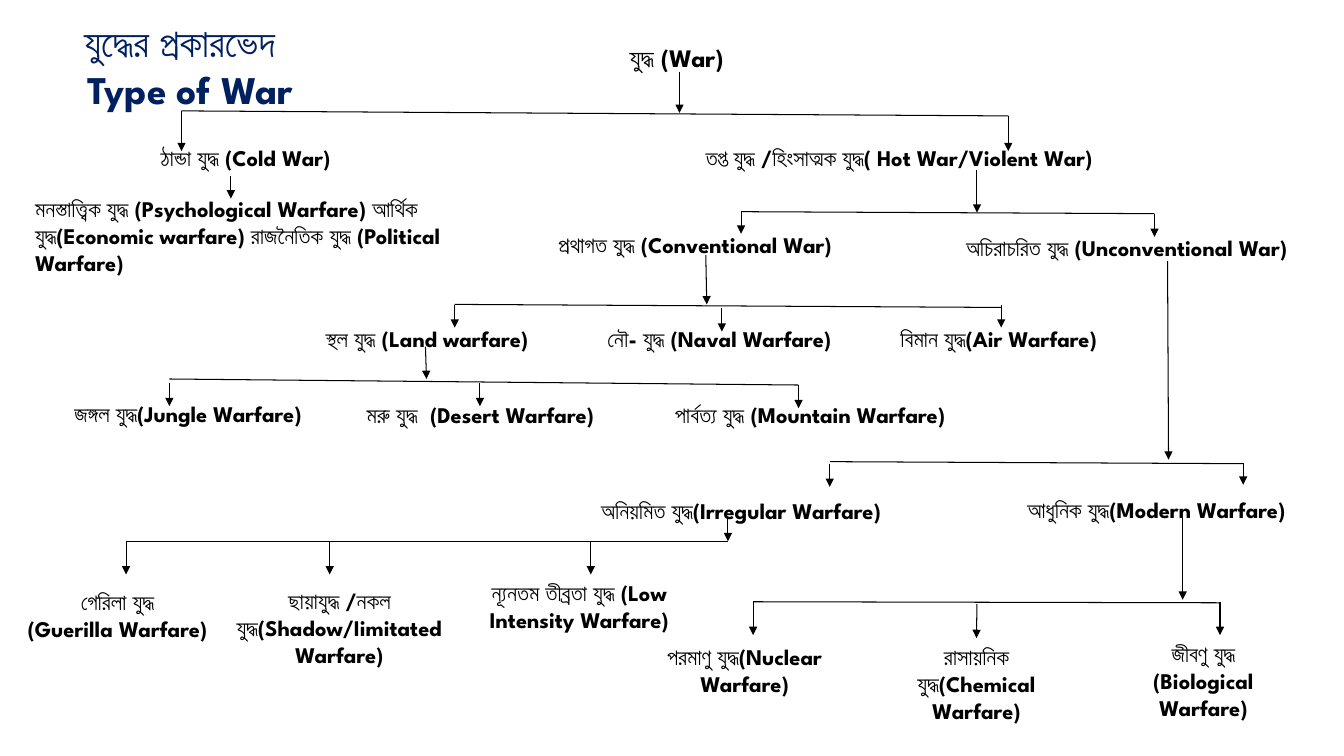
from dataclasses import dataclass

from pptx import Presentation
from pptx.dml.color import RGBColor
from pptx.enum.shapes import MSO_CONNECTOR as Connector
from pptx.enum.text import MSO_ANCHOR as Anchor, MSO_AUTO_SIZE as AutoSize, PP_ALIGN as Align
from pptx.oxml.ns import qn
from pptx.shapes.autoshape import Shape
from pptx.slide import Slide
from pptx.util import Pt
from lxml import etree

PX = 9144  # 100 px to the inch
FONT = "League Spartan"
NAVY, BLACK = "002060", "000000"
TITLE = "যুদ্ধের প্রকারভেদ \v Type of War"
TITLE_BOX = (-38, 13, 443, 104)


@dataclass(frozen=True)
class Label:
    text: str
    left: int
    top: int
    width: int
    height: int = 37
    size: int = 16
    align: Align = Align.CENTER


@dataclass(frozen=True)
class Arrow:
    x: int
    top: int
    bottom: int
    drift: int = 0


@dataclass(frozen=True)
class Rail:
    left: int
    left_y: int
    right: int
    right_y: int


@dataclass(frozen=True)
class Branch:
    """A stem from the parent, a rail below it and drops to the children."""
    stem: Arrow
    rail: Rail
    drops: tuple[Arrow, ...]


LABELS = [
    Label("যুদ্ধ (War) ", 453, 37, 443, 40, size=18),
    Label("ঠান্ডা যুদ্ধ (Cold War) ", 25, 138, 443),
    Label("তপ্ত যুদ্ধ /হিংসাত্মক যুদ্ধ( Hot War/Violent War)", 690, 138, 517, align=Align.LEFT),
    Label("মনস্তাত্ত্বিক যুদ্ধ (Psychological Warfare) আর্থিক যুদ্ধ(Economic warfare) "
          "রাজনৈতিক যুদ্ধ (Political Warfare)", 25, 189, 443, 91, align=Align.LEFT),
    Label("প্রথাগত যুদ্ধ (Conventional War)", 468, 224, 443),
    Label("অচিরাচরিত যুদ্ধ (Unconventional War)", 896, 227, 443),
    Label("স্থল যুদ্ধ (Land warfare)", 260, 318, 327),
    Label("নৌ- যুদ্ধ (Naval Warfare) ", 553, 318, 327),
    Label("বিমান যুদ্ধ(Air Warfare) ", 830, 318, 327),
    Label("জঙ্গল যুদ্ধ(Jungle Warfare)", 32, 392, 309),
    Label("মরু যুদ্ধ  (Desert Warfare)", 327, 393, 299),
    Label("পার্বত্য যুদ্ধ (Mountain Warfare)", 625, 393, 357),
    Label("অনিয়মিত যুদ্ধ(Irregular Warfare)", 529, 488, 412),
    Label("আধুনিক যুদ্ধ(Modern Warfare)", 941, 487, 412),
    Label("গেরিলা যুদ্ধ\v(Guerilla Warfare)", 2, 579, 229, 64),
    Label("ছায়াযুদ্ধ /নকল যুদ্ধ(Shadow/Iimitated Warfare)", 222, 578, 229, 91),
    Label("ন্যূনতম তীব্রতা যুদ্ধ (Low Intensity Warfare)", 460, 570, 229, 91),
    Label("পরমাণু যুদ্ধ(Nuclear Warfare)", 648, 633, 181, 91),
    Label("রাসায়নিক যুদ্ধ(Chemical Warfare)", 878, 633, 181, 91),
    Label("জীবণু যুদ্ধ (Biological Warfare)", 1103, 630, 181, 91),
]

COLD_WAR_ARROW = Arrow(229, 175, 197)
BRANCHES = [
    Branch(Arrow(674, 71, 112), Rail(180, 110, 1000, 115),
           (Arrow(180, 110, 150), Arrow(1000, 115, 150))),
    Branch(Arrow(969, 169, 211), Rail(735, 210, 1145, 212),
           (Arrow(735, 209, 232), Arrow(1145, 212, 235))),
    Branch(Arrow(700, 253, 302, drift=1), Rail(451, 302, 993, 305),
           (Arrow(451, 303, 325), Arrow(716, 306, 329), Arrow(993, 303, 325))),
    Branch(Arrow(422, 344, 376, drift=1), Rail(168, 376, 792, 382),
           (Arrow(168, 380, 403), Arrow(476, 380, 403), Arrow(792, 382, 405))),
    Branch(Arrow(1158, 259, 456, drift=1), Rail(823, 458, 1233, 460),
           (Arrow(823, 460, 483), Arrow(1233, 459, 481))),
    Branch(Arrow(722, 514, 537), Rail(125, 537, 722, 537),
           tuple(Arrow(x, 537, 570) for x in (125, 327, 586))),
    Branch(Arrow(1173, 514, 595), Rail(747, 597, 1210, 598),
           (Arrow(747, 597, 630), Arrow(969, 599, 633), Arrow(1210, 597, 630))),
]


def rgb(value: str) -> RGBColor:
    return RGBColor.from_string(value)


def write(shape: Shape, text: str, size: int, color: str, align: Align) -> None:
    frame = shape.text_frame
    frame.text = text
    frame_format = {"word_wrap": True, "auto_size": AutoSize.SHAPE_TO_FIT_TEXT,
                    "vertical_anchor": Anchor.TOP}
    for name, value in frame_format.items():
        setattr(frame, name, value)
    paragraph = frame.paragraphs[0]
    paragraph.alignment = align
    for run in paragraph.runs:
        for name, value in {"name": FONT, "size": Pt(size), "bold": True}.items():
            setattr(run.font, name, value)
        run.font.color.rgb = rgb(color)


def add_title(slide: Slide) -> None:
    title = slide.shapes.title
    for name, value in zip(("left", "top", "width", "height"), TITLE_BOX):
        setattr(title, name, value * PX)
    write(title, TITLE, 28, NAVY, Align.CENTER)


def add_label(slide: Slide, label: Label) -> Shape:
    box = (label.left, label.top, label.width, label.height)
    shape = slide.shapes.add_textbox(*(value * PX for value in box))
    write(shape, label.text, label.size, BLACK, label.align)
    return shape


def add_line(slide: Slide, *ends: int):
    line = slide.shapes.add_connector(Connector.STRAIGHT, *(value * PX for value in ends))
    line.line.color.rgb = rgb(BLACK)
    line.line.width = Pt(0.75)
    etree.SubElement(line._element.spPr, qn("a:effectLst"))
    return line


def add_arrow(slide: Slide, arrow: Arrow, boxes: list[Shape]) -> None:
    """Draw an arrow, joined to a box when its tip meets the middle of the top side."""
    line = add_line(slide, arrow.x, arrow.top, arrow.x + arrow.drift, arrow.bottom)
    etree.SubElement(line.line._get_or_add_ln(), qn("a:tailEnd"), type="triangle")
    for box in boxes:
        middle = box.left + box.width // 2
        if abs(line.end_x - middle) <= PX and abs(line.end_y - box.top) <= PX:
            line.end_connect(box, 0)


def main() -> None:
    presentation = Presentation()
    presentation.slide_width, presentation.slide_height = 1333 * PX, 750 * PX
    slide = presentation.slides.add_slide(presentation.slide_layouts[5])
    add_title(slide)
    boxes = [add_label(slide, label) for label in LABELS]
    add_arrow(slide, COLD_WAR_ARROW, boxes)
    for branch in BRANCHES:
        rail = branch.rail
        add_line(slide, rail.left, rail.left_y, rail.right, rail.right_y)
        for arrow in (branch.stem, *branch.drops):
            add_arrow(slide, arrow, boxes)
    presentation.save("out.pptx")


if __name__ == "__main__":
    main()
